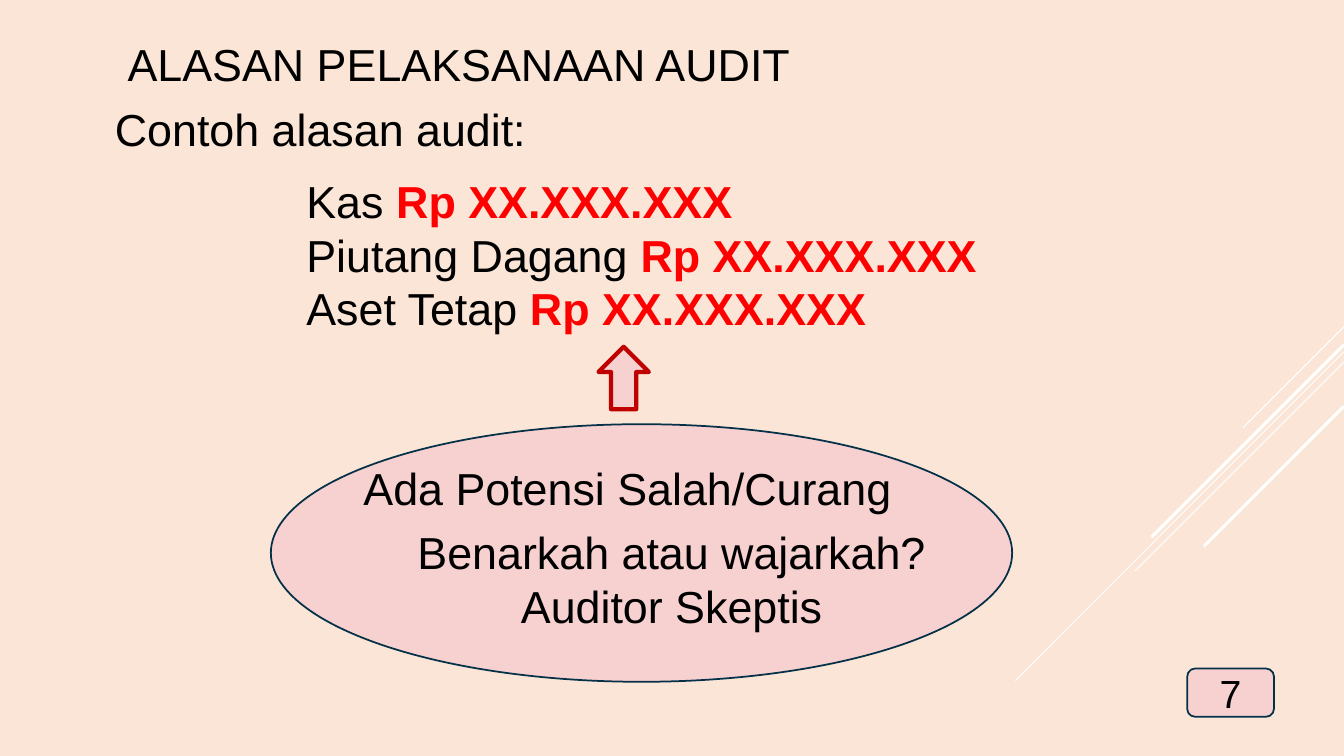
from pptx import Presentation
from pptx.dml.color import RGBColor
from pptx.enum.shapes import MSO_CONNECTOR as CONN, MSO_SHAPE as SHAPE
from pptx.enum.text import MSO_ANCHOR as ANCHOR, MSO_AUTO_SIZE as AUTO, PP_ALIGN as ALIGN
from pptx.oxml.ns import qn
from pptx.util import Pt
from lxml import etree


def rgb(value):
    return RGBColor.from_string(value)


def write(s, paragraphs, size=32, align=ALIGN.LEFT):
    """Fill a shape with paragraphs, each a list of (text, colour, bold)."""
    tf = s.text_frame
    for i, runs in enumerate(paragraphs):
        p = tf.add_paragraph() if i else tf.paragraphs[0]
        p.alignment = align
        for text, colour, bold in runs:
            r = p.add_run()
            r.text = text
            r.font.name = "Arial"
            r.font.size = Pt(size)
            r.font.bold = bold
            r.font.color.rgb = rgb(colour)


BLACK, RED, PINK, NAVY = "000000", "FF0000", "F7D0D0", "043148"

prs = Presentation()
prs.slide_width, prs.slide_height = Pt(960), Pt(540)
slide = prs.slides.add_slide(prs.slide_layouts[6])
slide.background.fill.solid()
slide.background.fill.fore_color.rgb = rgb("FAE5D7")

# Diagonal lines from the right edge, all at 45 degrees: start height, reach, width
for y, reach, width in [(233.3, 72, 0.75), (251.3, 234.7, 0.75), (258.5, 149.4, 0.75),
                        (246.2, 137.5, 2.25), (290.2, 100, 2.25)]:
    s = slide.shapes.add_connector(CONN.STRAIGHT, Pt(960), Pt(y), Pt(960 - reach), Pt(y + reach))
    s.line.color.rgb = rgb("FFFFFF")
    s.line.width = Pt(width)
    etree.SubElement(s._element.spPr, qn("a:effectLst"))

# Page number box, question oval and upward arrow
shapes = []
for kind, x, y, w, h, line, width in [
    (SHAPE.ROUNDED_RECTANGLE, 848, 477.5, 62, 34.5, NAVY, 1.25),
    (SHAPE.OVAL, 193.5, 303, 529.5, 184, NAVY, 1.25),
    (SHAPE.RIGHT_ARROW, 423.2, 252, 44.6, 36, "C00000", 3),
]:
    s = slide.shapes.add_shape(kind, Pt(x), Pt(y), Pt(w), Pt(h))
    s.shadow.inherit = False
    s.fill.solid()
    s.fill.fore_color.rgb = rgb(PINK)
    s.line.color.rgb = rgb(line)
    s.line.width = Pt(width)
    shapes.append(s)
page_box, oval, arrow = shapes
page_box.text_frame.vertical_anchor = ANCHOR.MIDDLE
write(page_box, [[("7", BLACK, False)]], 28, ALIGN.CENTER)
arrow.rotation = 270

# Texts: place, wrapping, alignment, paragraphs
accounts = [[(name + " ", BLACK, False), ("Rp XX.XXX.XXX", RED, True)]
            for name in ("Kas", "Piutang Dagang", "Aset Tetap")]
title, intro, doubt, *questions = [
    [(text, BLACK, False)] for text in (
        "ALASAN PELAKSANAAN AUDIT", "Contoh alasan audit:", "Ada Potensi Salah/Curang",
        "Benarkah atau wajarkah?", "Auditor Skeptis")]
for x, y, w, h, wrap, align, paragraphs in [
    (54.7, 23, 546.5, 46, True, ALIGN.CENTER, [title]),
    (75, 69.3, 310.5, 46, False, ALIGN.LEFT, [intro]),
    (211.8, 120.5, 522.7, 123.6, True, ALIGN.LEFT, accounts),
    (259.2, 371.3, 441.4, 84.8, True, ALIGN.CENTER, questions),
    (252.5, 325.5, 394.6, 46, False, ALIGN.LEFT, [doubt]),
]:
    s = slide.shapes.add_textbox(Pt(x), Pt(y), Pt(w), Pt(h))
    s.text_frame.word_wrap = wrap
    s.text_frame.auto_size = AUTO.SHAPE_TO_FIT_TEXT
    write(s, paragraphs, align=align)

prs.save("out.pptx")
